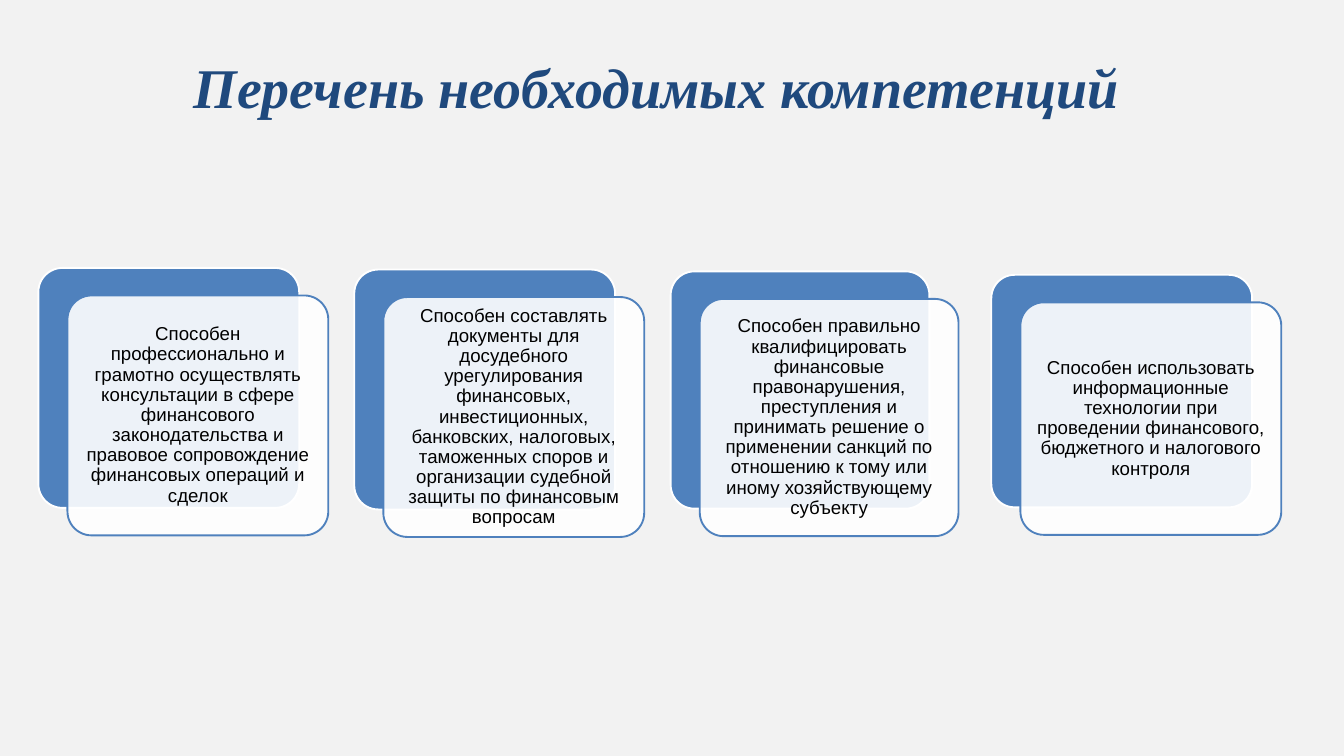
from pptx import Presentation
from pptx.dml.color import RGBColor
from pptx.enum import shapes, text
from pptx.oxml import ns
from pptx.util import Cm, Pt
from lxml import etree

COLORS = {
    "background": "F2F2F2",
    "title": "1F497D",
    "accent": "4F81BD",
    "white": "FFFFFF",
    "text": "000000",
}

COMPETENCIES = [
    ((1.45, 10.13, 9.86, 9.07),
     "Способен профессионально и грамотно осуществлять консультации в сфере "
     "финансового законодательства и правовое сопровождение финансовых "
     "операций и сделок"),
    ((13.39, 10.19, 9.86, 9.07),
     "Способен составлять документы для досудебного урегулирования финансовых, "
     "инвестиционных, банковских, налоговых, таможенных споров и организации "
     "судебной защиты по финансовым вопросам"),
    ((25.35, 10.26, 9.78, 8.97),
     "Способен правильно квалифицировать финансовые правонарушения, "
     "преступления и принимать решение о применении санкций по отношению к "
     "тому или иному хозяйствующему субъекту"),
    ((37.47, 10.39, 9.86, 8.79),
     "Способен использовать информационные технологии при проведении "
     "финансового, бюджетного и налогового контроля"),
]
CARD_SHIFT = (1.1, 1.04)


def color(name):
    return RGBColor.from_string(COLORS[name])


def style_text(tf, content, font, size, fill):
    tf.word_wrap = True
    tf.text = content
    p = tf.paragraphs[0]
    p.alignment = text.PP_ALIGN.CENTER
    r = p.runs[0]
    r.font.name = font
    r.font.size = Pt(size)
    r.font.color.rgb = color(fill)
    return p


def add_title(s, box, content):
    tf = s.shapes.add_textbox(*map(Cm, box)).text_frame
    p = style_text(tf, content, "Times New Roman", 60, "title")
    p.runs[0].font.bold = True
    p.runs[0].font.italic = True


def add_panel(s, box, fill, line):
    sp = s.shapes.add_shape(shapes.MSO_SHAPE.ROUNDED_RECTANGLE, *map(Cm, box))
    sp.adjustments[0] = 0.1
    sp.shadow.inherit = False
    sp.fill.solid()
    sp.fill.fore_color.rgb = color(fill)
    sp.line.color.rgb = color(line)
    sp.line.width = Pt(2)
    return sp


def set_opacity(sp, percent):
    clr = sp.element.spPr.find(ns.qn("a:solidFill")).find(ns.qn("a:srgbClr"))
    etree.SubElement(clr, ns.qn("a:alpha")).set("val", str(percent * 1000))


def add_competency(s, box, content):
    left, top, width, height = box
    dx, dy = CARD_SHIFT
    add_panel(s, box, "accent", "white")
    card = add_panel(s, (left + dx, top + dy, width, height), "white", "accent")
    set_opacity(card, 90)
    tf = card.text_frame
    tf.margin_left = tf.margin_right = tf.margin_top = tf.margin_bottom = Cm(0.2)
    tf.vertical_anchor = text.MSO_ANCHOR.MIDDLE
    p = style_text(tf, content, "Arial", 20, "text")
    p.line_spacing = 0.9


def main():
    prs = Presentation()
    prs.slide_width, prs.slide_height = Cm(50.8), Cm(28.58)
    s = prs.slides.add_slide(prs.slide_layouts[6])
    s.background.fill.solid()
    s.background.fill.fore_color.rgb = color("background")
    add_title(s, (5.16, 1.85, 39.29, 2.82), "Перечень необходимых компетенций")
    for box, content in COMPETENCIES:
        add_competency(s, box, content)
    prs.save("out.pptx")


if __name__ == "__main__":
    main()
